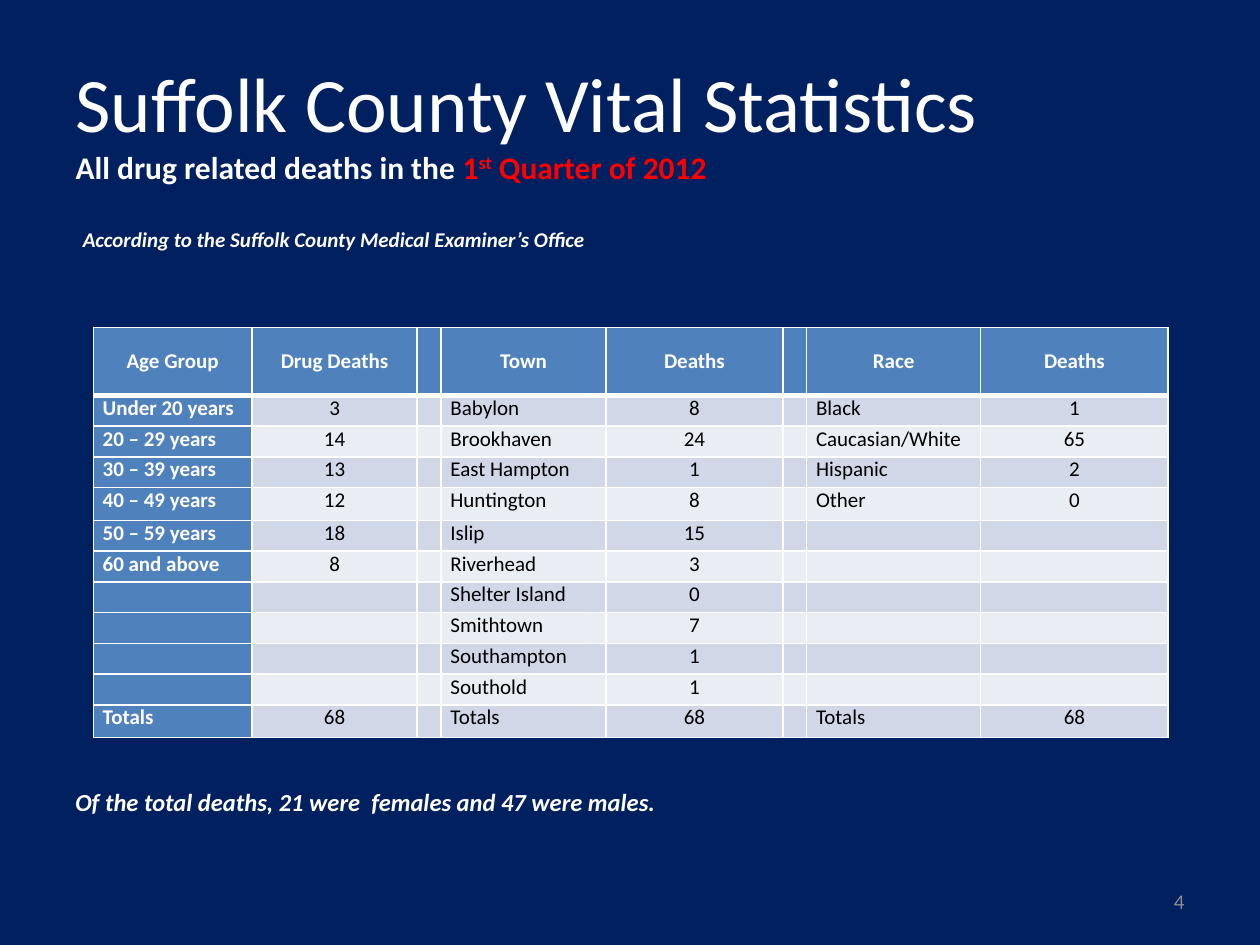
import pptx
import pptx.dml.color
import pptx.enum.text
import pptx.oxml.ns
import pptx.util
from lxml import etree

Cm = pptx.util.Cm
Pt = pptx.util.Pt
ALIGN = pptx.enum.text.PP_ALIGN
ANCHOR = pptx.enum.text.MSO_ANCHOR
qn = pptx.oxml.ns.qn

FONT = "Calibri"
COLORS = {
    "background": "002060",
    "white": "FFFFFF",
    "black": "000000",
    "red": "FF0000",
    "header": "4F81BD",
    "odd": "D0D8E8",
    "even": "E9EDF4",
    "number": "8C8C8C",
}

HEADERS = ["Age Group", "Drug Deaths", "", "Town", "Deaths", "", "Race", "Deaths"]
AGES = [("Under 20 years", 3), ("20 – 29 years", 14), ("30 – 39 years", 13),
        ("40 – 49 years", 12), ("50 – 59 years", 18), ("60 and above", 8)]
TOWNS = [("Babylon", 8), ("Brookhaven", 24), ("East Hampton", 1), ("Huntington", 8),
         ("Islip", 15), ("Riverhead", 3), ("Shelter Island", 0), ("Smithtown", 7),
         ("Southampton", 1), ("Southold", 1)]
RACES = [("Black", 1), ("Caucasian/White", 65), ("Hispanic", 2), ("Other", 0)]
COL_WIDTHS = [3.2, 3.33, 0.48, 3.33, 3.56, 0.46, 3.51, 3.78]
ROW_HEIGHTS = [1.37] + [0.62] * 3 + [0.66] + [0.62] * 6 + [0.66]
LABEL_COLS = (0, 3, 6)


def rgb(name):
    return pptx.dml.color.RGBColor.from_string(COLORS[name])


def add_text(p, text, size=12, color="white", bold=False, italic=False,
             align=ALIGN.LEFT, baseline=None):
    p.alignment = align
    r = p.add_run()
    r.text = text
    r.font.name = FONT
    r.font.size = Pt(size)
    r.font.bold = bold
    r.font.italic = italic
    r.font.color.rgb = rgb(color)
    if baseline:
        r.font._element.set("baseline", str(baseline))


def add_title(slide, left, top, width, height):
    sp = slide.shapes.title
    sp.left, sp.top, sp.width, sp.height = Cm(left), Cm(top), Cm(width), Cm(height)
    tf = sp.text_frame
    tf.vertical_anchor = ANCHOR.MIDDLE
    p = tf.paragraphs[0]
    add_text(p, "Suffolk County Vital Statistics", size=44)
    p.add_line_break()
    add_text(p, "All drug related deaths in the ", size=18, bold=True)
    add_text(p, "1", size=18, color="red", bold=True)
    add_text(p, "st", size=18, color="red", bold=True, baseline=30000)
    add_text(p, " Quarter of 2012", size=18, color="red", bold=True)


def add_line_of_text(slide, text, left, top, width, height, anchor=ANCHOR.TOP, **fmt):
    tf = slide.shapes.add_textbox(Cm(left), Cm(top), Cm(width), Cm(height)).text_frame
    tf.word_wrap = True
    tf.vertical_anchor = anchor
    add_text(tf.paragraphs[0], text, **fmt)


def table_rows():
    def total(pairs):
        return sum(count for _, count in pairs)

    groups = (AGES, TOWNS, RACES)
    rows = [HEADERS]
    for i in range(len(TOWNS)):
        age, town, race = [g[i] if i < len(g) else ("", "") for g in groups]
        rows.append([*age, "", *town, "", *race])
    age, town, race = [("Totals", total(g)) for g in groups]
    rows.append([*age, "", *town, "", *race])
    return rows


def set_borders(cell, **points):
    tc_pr = cell._tc.get_or_add_tcPr()
    for side in ("L", "R", "T", "B"):
        ln = etree.SubElement(tc_pr, qn("a:ln" + side), w=str(Pt(points.get(side, 1))))
        fill = etree.SubElement(ln, qn("a:solidFill"))
        etree.SubElement(fill, qn("a:srgbClr"), val=COLORS["white"])


def format_cell(cell, text, row, col):
    header = row == 0
    strong = header or col == 0
    cell.margin_left = cell.margin_right = Cm(0.19)
    cell.margin_top = cell.margin_bottom = 0
    cell.vertical_anchor = ANCHOR.MIDDLE if header else ANCHOR.TOP
    set_borders(cell, T=3 if row == 1 else 1, B=3 if header else 1)
    cell.fill.solid()
    cell.fill.fore_color.rgb = rgb("header" if strong else "odd" if row % 2 else "even")
    p = cell.text_frame.paragraphs[0]
    if text == "":
        etree.SubElement(p._p, qn("a:endParaRPr"), sz="1200")
        return
    left = not header and col in LABEL_COLS
    add_text(p, str(text), bold=strong, color="white" if strong else "black",
             align=ALIGN.LEFT if left else ALIGN.CENTER)


def add_deaths_table(slide, left, top):
    rows = table_rows()
    table = slide.shapes.add_table(
        len(rows), len(HEADERS), Cm(left), Cm(top),
        Cm(sum(COL_WIDTHS)), Cm(sum(ROW_HEIGHTS))).table
    for column, width in zip(table.columns, COL_WIDTHS):
        column.width = Cm(width)
    for r, (values, height) in enumerate(zip(rows, ROW_HEIGHTS)):
        table.rows[r].height = Cm(height)
        for c, value in enumerate(values):
            format_cell(table.cell(r, c), value, r, c)


def main():
    prs = pptx.Presentation()
    prs.slide_width, prs.slide_height = Cm(25.4), Cm(19.05)
    slide = prs.slides.add_slide(prs.slide_layouts[5])
    slide.background.fill.solid()
    slide.background.fill.fore_color.rgb = rgb("background")

    add_title(slide, 1.27, 0.84, 22.86, 3.18)
    add_line_of_text(slide, "According to the Suffolk County Medical Examiner’s Office",
                     1.42, 4.45, 22.71, 0.8, bold=True, italic=True)
    add_deaths_table(slide, 1.88, 6.6)
    add_line_of_text(slide, "Of the total deaths, 21 were  females and 47 were males.",
                     1.27, 15.74, 22.86, 0.9, size=14, bold=True, italic=True)
    add_line_of_text(slide, "4", 18.2, 17.66, 5.93, 1.01, anchor=ANCHOR.MIDDLE,
                     color="number", align=ALIGN.RIGHT)
    prs.save("out.pptx")


if __name__ == "__main__":
    main()
